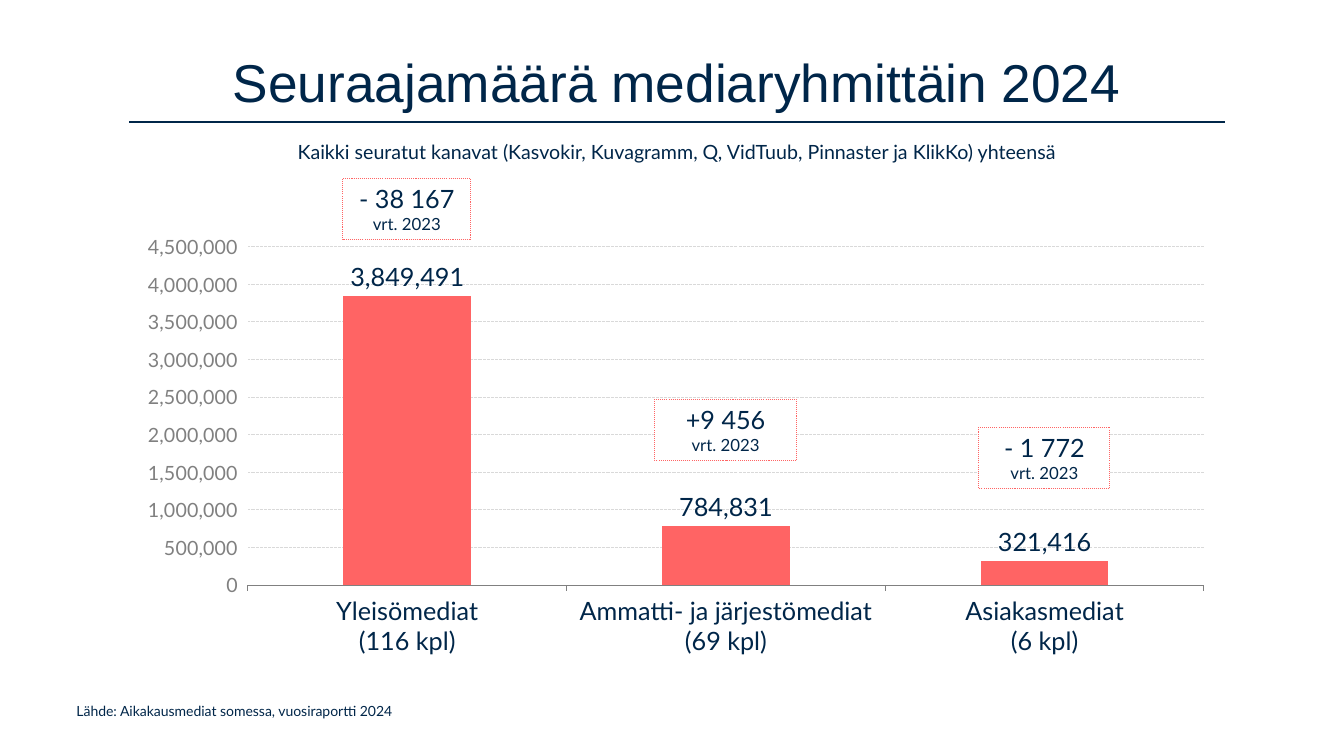
from lxml.etree import SubElement
from pptx import Presentation
from pptx.chart.data import CategoryChartData
from pptx.dml.color import RGBColor
from pptx.enum.chart import XL_CHART_TYPE, XL_LABEL_POSITION, XL_TICK_MARK
from pptx.enum.dml import MSO_LINE
from pptx.enum.shapes import MSO_CONNECTOR, MSO_SHAPE
from pptx.enum.text import MSO_ANCHOR, PP_ALIGN
from pptx.oxml import parse_xml
from pptx.oxml.ns import nsdecls, qn
from pptx.util import Inches, Pt

TITLE = "Seuraajamäärä mediaryhmittäin 2024"
SUBTITLE = "Kaikki seuratut kanavat (Kasvokir, Kuvagramm, Q, VidTuub, Pinnaster ja KlikKo) yhteensä"
SOURCE = "Lähde: Aikakausmediat somessa, vuosiraportti 2024"
COMPARED = "vrt. 2023"
GROUPS = [
    ("Yleisömediat\n(116 kpl)", 3849491),
    ("Ammatti- ja järjestömediat\n(69 kpl)", 784831),
    ("Asiakasmediat\n(6 kpl)", 321416),
]
CHANGES = [("- 38 167", 23.6, 9.53), ("+9 456", 52.8, 10.58), ("- 1 772", 56.53, 9.75)]

THEME = {
    "navy": RGBColor.from_string("002649"),
    "coral": RGBColor.from_string("FF6464"),
    "white": RGBColor.from_string("FFFFFF"),
    "axis": RGBColor.from_string("808080"),
    "grid": RGBColor.from_string("D9D9D9"),
    "head": "Arial", "body": "Lato",
    "title": 38, "large": 18, "medium": 14, "small": 12, "tiny": 10,
}
AREAS = {
    "title": (9.6, 6.53, 81.55, 9.47),
    "subtitle": (9.6, 17.87, 81.55, 4.53),
    "chart": (9.45, 29.73, 81.77, 58.13),
    "source": (4.95, 92.27, 49.36, 5.87),
}
RULE_Y = 16.13
FIRST_CENTRE, PITCH, BOX_HEIGHT = 30.27, 23.72, 8.13
PLOT = {"x": 0.11, "y": 0.05, "w": 0.87, "h": 0.77}

prs = Presentation()
prs.slide_width, prs.slide_height = Inches(13.33), Inches(7.5)
slide = prs.slides.add_slide(prs.slide_layouts[5])


def place(x, y, w, h):
    return [int(v * side / 100) for v, side in
            zip((x, y, w, h), (prs.slide_width, prs.slide_height) * 2)]


def style(font, size, color="navy", face="body"):
    values = {"size": Pt(THEME[size]), "name": THEME[face], "bold": False}
    for key, value in values.items():
        setattr(font, key, value)
    font.color.rgb = THEME[color]


def write(p, text, size, align=PP_ALIGN.CENTER, face="body"):
    p.alignment = align
    r = p.add_run()
    r.text = text
    style(r.font, size, face=face)


def add_text(area, text, size, align):
    tf = slide.shapes.add_textbox(*place(*AREAS[area])).text_frame
    tf.word_wrap = True
    write(tf.paragraphs[0], text, size, align)


def add_rule():
    left, _, width, _ = AREAS["title"]
    x, y, w, _ = place(left, RULE_Y, width, 0)
    line = slide.shapes.add_connector(MSO_CONNECTOR.STRAIGHT, x, y, x + w, y)
    line.line.color.rgb, line.line.width = THEME["navy"], Pt(1)
    SubElement(line._element.spPr, qn("a:effectLst"))


def add_title():
    sp = slide.shapes.title
    for key, value in zip(("left", "top", "width", "height"), place(*AREAS["title"])):
        setattr(sp, key, value)
    tf = sp.text_frame
    tf.vertical_anchor = MSO_ANCHOR.MIDDLE
    tf.paragraphs[0].line_spacing = 0.9
    write(tf.paragraphs[0], TITLE, "title", face="head")


def add_column_chart():
    data = CategoryChartData(number_format="#,##0")
    data.categories = [name for name, _ in GROUPS]
    data.add_series("Series 1", [value for _, value in GROUPS])
    chart = slide.shapes.add_chart(
        XL_CHART_TYPE.COLUMN_CLUSTERED, *place(*AREAS["chart"]), data).chart
    chart.has_legend = chart.has_title = False
    style(chart.font, "large")

    plot = chart.plots[0]
    plot.gap_width, plot.vary_by_categories = 150, False
    fill = plot.series[0].format.fill
    fill.solid()
    fill.fore_color.rgb = THEME["coral"]
    plot.has_data_labels = True
    labels = plot.data_labels
    formats = {"show_value": True, "number_format": "#,##0",
               "number_format_is_linked": False,
               "position": XL_LABEL_POSITION.OUTSIDE_END}
    for key, value in formats.items():
        setattr(labels, key, value)
    style(labels.font, "large")

    cat, val = chart.category_axis, chart.value_axis
    cat.major_tick_mark = val.major_tick_mark = XL_TICK_MARK.OUTSIDE
    style(cat.tick_labels.font, "large")
    cat.format.line.color.rgb = THEME["axis"]
    style(val.tick_labels.font, "medium", "axis")
    val.tick_labels.number_format = "#,##0"
    val.tick_labels.number_format_is_linked = False
    val.minimum_scale, val.maximum_scale, val.major_unit = 0, 4500000, 500000
    val.format.line.fill.background()
    grid = val.major_gridlines.format.line
    grid.color.rgb, grid.width = THEME["grid"], Pt(0.75)
    grid.dash_style = MSO_LINE.SQUARE_DOT

    parts = '<c:layoutTarget val="inner"/><c:xMode val="edge"/><c:yMode val="edge"/>'
    parts += "".join(f'<c:{key} val="{value}"/>' for key, value in PLOT.items())
    layout = parse_xml(f'<c:layout {nsdecls("c")}><c:manualLayout>{parts}'
                       '</c:manualLayout></c:layout>')
    area = chart._chartSpace.chart.plotArea
    for old in area.findall(qn("c:layout")):
        area.remove(old)
    area.insert(0, layout)


def add_change(i, change, top, width):
    left = FIRST_CENTRE + i * PITCH - width / 2
    sp = slide.shapes.add_shape(MSO_SHAPE.RECTANGLE, *place(left, top, width, BOX_HEIGHT))
    sp.shadow.inherit = False
    sp.fill.solid()
    sp.fill.fore_color.rgb = THEME["white"]
    sp.line.color.rgb, sp.line.width = THEME["coral"], Pt(0.75)
    sp.line.dash_style = MSO_LINE.ROUND_DOT
    tf = sp.text_frame
    tf.word_wrap, tf.vertical_anchor = True, MSO_ANCHOR.TOP
    p = tf.paragraphs[0]
    write(p, change, "large")
    p.add_line_break()
    write(p, COMPARED, "small")


add_rule()
add_text("source", SOURCE, "tiny", PP_ALIGN.LEFT)
add_title()
add_text("subtitle", SUBTITLE, "medium", PP_ALIGN.CENTER)
add_column_chart()
for i, change in enumerate(CHANGES):
    add_change(i, *change)

prs.save("out.pptx")
